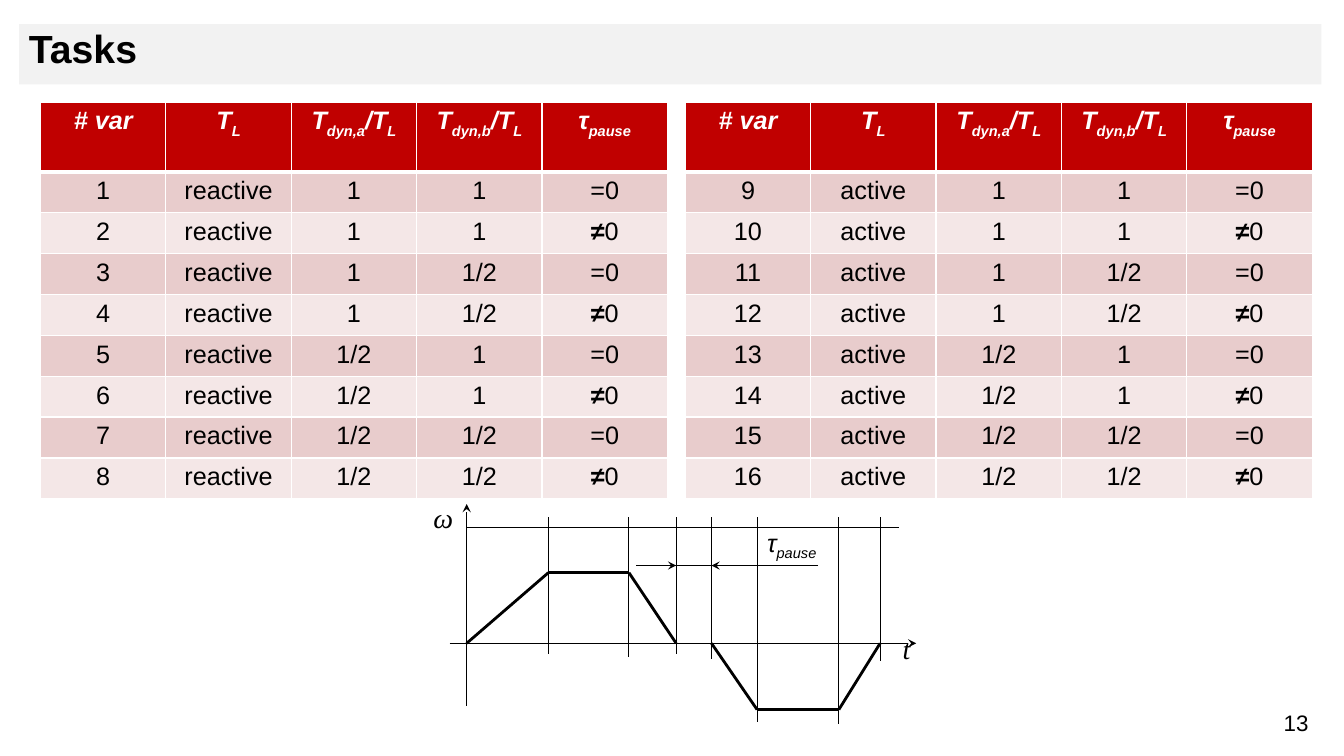
from itertools import pairwise
from lxml.etree import SubElement
from pptx import Presentation
from pptx.dml.color import RGBColor
from pptx.enum.shapes import MSO_CONNECTOR, MSO_SHAPE
from pptx.enum.text import MSO_ANCHOR, PP_ALIGN
from pptx.oxml import parse_xml
from pptx.oxml.ns import nsdecls, qn
from pptx.util import Cm, Pt

COLOURS = {"ink": "000000", "white": "FFFFFF", "band": "F2F2F2", "header": "C00000",
           "odd": "E8CCCC", "even": "F4E7E7"}
SUB = {"baseline": "-25000"}
PAUSE = [("τ", {}), ("pause", SUB)]
HEADERS = [
    [("# var", {})],
    [("T", {}), ("L", SUB)],
    [("T", {}), ("dyn,a", SUB), ("/T", {}), ("L", SUB)],
    [("T", {}), ("dyn,b", SUB), ("/T", {}), ("L", SUB)],
    PAUSE,
]
RATIOS = [("1", "1"), ("1", "1/2"), ("1/2", "1"), ("1/2", "1/2")]
PAUSES = [[("=0", {})], [("≠", {"b": "1"}), ("0", {})]]
TABLES = [(1.02, 1, "reactive"), (17.27, 9, "active")]
TABLE_TOP, COLUMN_WIDTH, HEADER_HEIGHT, ROW_HEIGHT = 2.57, 3.16, 1.76, 1.03

AXIS_Y, CRUISE_Y, REVERSE_Y, LIMIT_Y, PAUSE_Y = 16.21, 14.43, 17.88, 13.28, 14.25
AXIS_X, RISE_END, FALL_START, STOP, RESTART = 11.76, 13.82, 15.85, 17.04, 17.93
REVERSE_START, REVERSE_END, FINISH = 19.08, 21.14, 22.18
SPEED_PROFILES = [
    [(AXIS_X, AXIS_Y), (RISE_END, CRUISE_Y), (FALL_START, CRUISE_Y), (STOP, AXIS_Y)],
    [(RESTART, AXIS_Y), (REVERSE_START, REVERSE_Y), (REVERSE_END, REVERSE_Y), (FINISH, AXIS_Y)],
]
TIME_MARKS = [(RISE_END, 16.48), (FALL_START, 16.56), (STOP, 16.48), (RESTART, 16.61),
              (REVERSE_START, 18.19), (REVERSE_END, 18.24), (FINISH, 16.66)]
MARK_TOP = 13.03
THIN_LINES = [
    ((AXIS_X, 17.78), (AXIS_X, 12.7), True),
    ((11.33, AXIS_Y), (23.09, AXIS_Y), True),
    ((AXIS_X, LIMIT_Y), (22.66, LIMIT_Y), False),
    ((16.05, PAUSE_Y), (18.77, PAUSE_Y), False),
    ((20.62, PAUSE_Y), (RESTART, PAUSE_Y), True),
    ((16.03, PAUSE_Y), (STOP, PAUSE_Y), True),
]
LABELS = [
    ((31.85, 17.75, 1.63, 0.94), [("13", {})], 16, "Arial", False,
     {"alignment": PP_ALIGN.CENTER}),
    ((22.5, 15.65, 1.4, 0.64), [("t", {})], 20, "Times New Roman", True,
     {"line_spacing": 1.15, "space_after": Pt(10)}),
    ((10.67, 12.37, 2.06, 0.74), [("ω", {})], 20, "Times New Roman", True,
     {"line_spacing": 1.15, "space_after": Pt(10)}),
    ((18.9, 13.16, 2.11, 1.02), PAUSE, 18, "Arial", True,
     {"alignment": PP_ALIGN.CENTER}),
]


def colour(name):
    return RGBColor.from_string(COLOURS[name])


def apply(target, values):
    for name, value in values.items():
        setattr(target, name, value)


def write(frame, spans, font, layout):
    para = frame.paragraphs[0]
    apply(para, layout)
    for text, extras in spans:
        span = para.add_run()
        span.text = text
        apply(span.font, font)
        span.font.color.rgb = colour(font_colour(font))
        for name, value in extras.items():
            span.font._element.set(name, value)


def font_colour(font):
    return "white" if font["bold"] and font["italic"] else "ink"


def draw_line(page, start, end, width=0.75, arrow=False):
    points = [Cm(value) for value in (*start, *end)]
    line = page.shapes.add_connector(MSO_CONNECTOR.STRAIGHT, *points)
    line.line.width = Pt(width)
    line.line.color.rgb = colour("ink")
    if arrow:
        SubElement(line.line._get_or_add_ln(), qn("a:tailEnd"), type="stealth")
    SubElement(line._element.spPr, qn("a:effectLst"))


def set_borders(cell, row):
    widths = {"L": 1, "R": 1, "T": 3 if row == 1 else 1, "B": 3 if row == 0 else 1}
    for index, (side, width) in enumerate(widths.items()):
        border = parse_xml(
            f'<a:ln{side} {nsdecls("a")} w="{Pt(width)}"><a:solidFill>'
            f'<a:srgbClr val="{COLOURS["white"]}"/></a:solidFill></a:ln{side}>')
        cell._tc.get_or_add_tcPr().insert(index, border)


def add_variants(page, left, first, load):
    rows = [HEADERS]
    for index in range(8):
        plain = [str(first + index), load, *RATIOS[index // 2]]
        rows.append([[(text, {})] for text in plain] + [PAUSES[index % 2]])
    height = HEADER_HEIGHT + ROW_HEIGHT * 8
    table = page.shapes.add_table(len(rows), len(HEADERS), Cm(left), Cm(TABLE_TOP),
                                  Cm(COLUMN_WIDTH * len(HEADERS)), Cm(height)).table
    for column in table.columns:
        column.width = Cm(COLUMN_WIDTH)
    for number, row in enumerate(rows):
        heading = number == 0
        table.rows[number].height = Cm(HEADER_HEIGHT if heading else ROW_HEIGHT)
        fill = "header" if heading else ("odd" if number % 2 else "even")
        font = {"name": "Arial", "size": Pt(18), "bold": heading, "italic": heading}
        for position, spans in enumerate(row):
            cell = table.cell(number, position)
            cell.fill.solid()
            cell.fill.fore_color.rgb = colour(fill)
            set_borders(cell, number)
            write(cell.text_frame, spans, font, {"alignment": PP_ALIGN.CENTER})


def add_title(page):
    box = page.shapes.add_shape(MSO_SHAPE.RECTANGLE, Cm(0.48), Cm(0.61), Cm(32.82), Cm(1.52))
    box.shadow.inherit = False
    box.fill.solid()
    box.fill.fore_color.rgb = colour("band")
    box.line.fill.background()
    apply(box.text_frame, {"word_wrap": True, "vertical_anchor": MSO_ANCHOR.TOP})
    write(box.text_frame, [("Tasks", {})],
          {"name": "Arial", "size": Pt(28), "bold": True, "italic": False},
          {"alignment": PP_ALIGN.LEFT, "line_spacing": 0.9})


def add_diagram(page):
    for start, end, arrow in THIN_LINES:
        draw_line(page, start, end, arrow=arrow)
    for x, bottom in TIME_MARKS:
        draw_line(page, (x, MARK_TOP), (x, bottom))
    for profile in SPEED_PROFILES:
        for start, end in pairwise(profile):
            draw_line(page, start, end, width=2)


def main():
    deck = Presentation()
    apply(deck, {"slide_width": Cm(33.87), "slide_height": Cm(19.05)})
    page = deck.slides.add_slide(deck.slide_layouts[6])
    add_title(page)
    for left, first, load in TABLES:
        add_variants(page, left, first, load)
    add_diagram(page)
    for place, spans, size, name, italic, layout in LABELS:
        box = page.shapes.add_textbox(*[Cm(value) for value in place])
        box.text_frame.word_wrap = True
        font = {"name": name, "size": Pt(size), "bold": False, "italic": italic}
        write(box.text_frame, spans, font, layout)
    deck.save("out.pptx")


if __name__ == "__main__":
    main()
